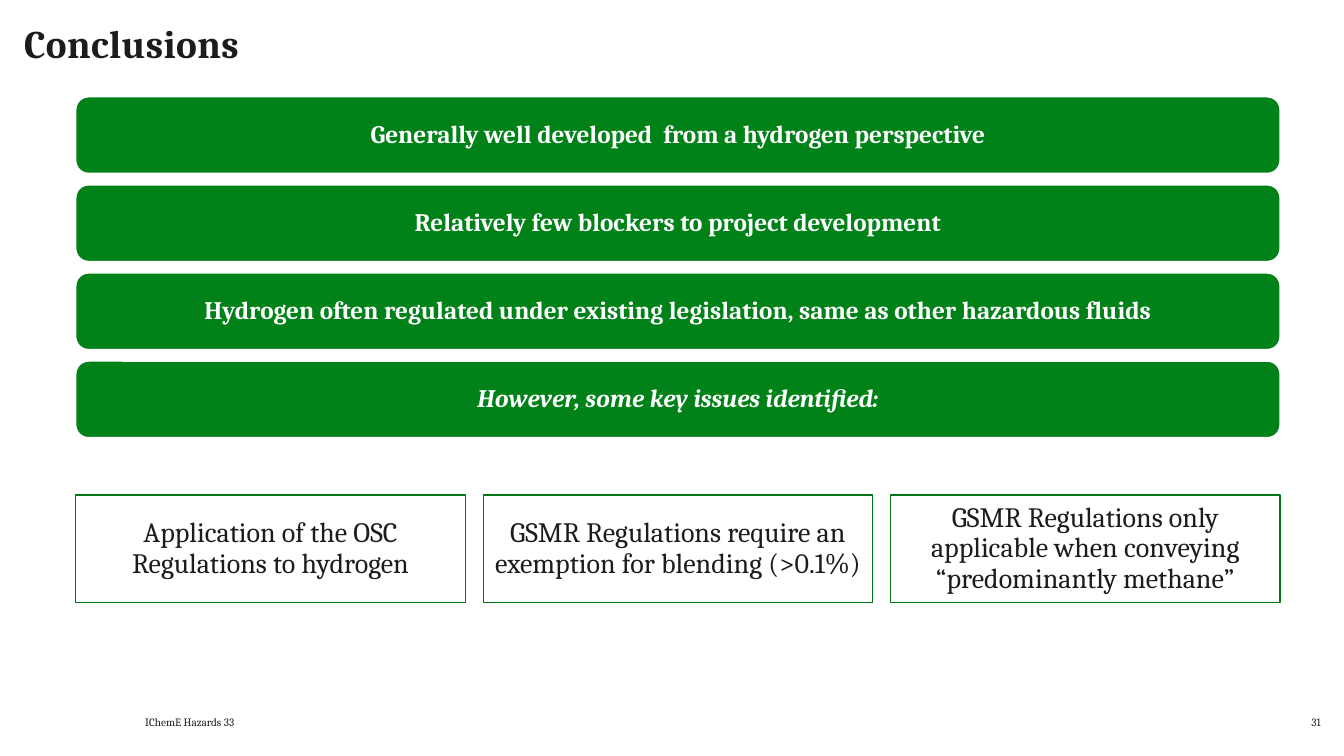
from pptx import Presentation
from pptx.dml.color import RGBColor
from pptx.enum.shapes import MSO_SHAPE
from pptx.enum.text import MSO_ANCHOR, PP_ALIGN
from pptx.util import Cm, Pt

INK, WHITE, GREEN, BORDER = "1C1C1C", "FFFFFF", "018219", "017617"

FINDINGS = [
    "Generally well developed  from a hydrogen perspective",
    "Relatively few blockers to project development",
    "Hydrogen often regulated under existing legislation, same as other hazardous fluids",
    "However, some key issues identified:",
]
ISSUES = [
    "Application of the OSC Regulations to hydrogen",
    "GSMR Regulations require an exemption for blending (>0.1%)",
    "GSMR Regulations only applicable when conveying “predominantly methane”",
]


def color(hex_code):
    return RGBColor.from_string(hex_code)


class SlideBuilder:
    font_name = "Cambria"

    def __init__(self, slide):
        self.slide = slide

    def set_text(self, frame, text, inset=0, anchor=MSO_ANCHOR.TOP, align=PP_ALIGN.LEFT,
                 ink=INK, line_spacing=0.9, tracking=0, **font_format):
        """Fill a text frame with one paragraph; tracking is in points."""
        frame_format = {"word_wrap": True, "vertical_anchor": anchor}
        for side in ("left", "top", "right", "bottom"):
            frame_format[f"margin_{side}"] = Cm(inset)
        for key, value in frame_format.items():
            setattr(frame, key, value)

        paragraph = frame.paragraphs[0]
        paragraph.alignment = align
        paragraph.line_spacing = line_spacing
        run = paragraph.add_run()
        run.text = text
        for key, value in {"name": self.font_name, **font_format}.items():
            setattr(run.font, key, value)
        run.font.color.rgb = color(ink)
        if tracking:
            run._r.get_or_add_rPr().set("spc", str(round(tracking * 100)))

    def label(self, text, left, top, width, height, **text_format):
        box = self.slide.shapes.add_textbox(Cm(left), Cm(top), Cm(width), Cm(height))
        self.set_text(box.text_frame, text, **text_format)

    def panel(self, preset, text, left, top, width, height, fill, line, **text_format):
        panel = self.slide.shapes.add_shape(preset, Cm(left), Cm(top), Cm(width), Cm(height))
        panel.shadow.inherit = False
        panel.fill.solid()
        panel.fill.fore_color.rgb = color(fill)
        panel.line.color.rgb = color(line)
        panel.line.width = Pt(1)
        self.set_text(panel.text_frame, text, anchor=MSO_ANCHOR.MIDDLE,
                      align=PP_ALIGN.CENTER, **text_format)


def main():
    presentation = Presentation()
    presentation.slide_width, presentation.slide_height = Cm(33.87), Cm(19.05)
    builder = SlideBuilder(presentation.slides.add_slide(presentation.slide_layouts[6]))

    builder.label("Conclusions", 0.61, 0.61, 32.66, 2, size=Pt(28), bold=True, tracking=0.3)

    left, full_width = 1.91, 30.35
    bar_height, bar_step = 1.93, 2.22
    for row, finding in enumerate(FINDINGS):
        builder.panel(MSO_SHAPE.ROUNDED_RECTANGLE, finding,
                      left, 2.44 + row * bar_step, full_width, bar_height,
                      GREEN, WHITE, inset=0.18, ink=WHITE, size=Pt(18), bold=True,
                      italic=finding == FINDINGS[-1])

    issue_gap = 0.45
    issue_width = (full_width - issue_gap * (len(ISSUES) - 1)) / len(ISSUES)
    for column, issue in enumerate(ISSUES):
        builder.panel(MSO_SHAPE.RECTANGLE, issue,
                      left + column * (issue_width + issue_gap), 12.47, issue_width, 2.72,
                      WHITE, BORDER, inset=0.2, size=Pt(20))

    footer = {"anchor": MSO_ANCHOR.BOTTOM, "line_spacing": 1.0, "size": Pt(8)}
    builder.label("IChemE Hazards 33", 3.66, 17.86, 13, 0.5, **footer)
    builder.label("31", 31.78, 17.86, 1.5, 0.5, align=PP_ALIGN.RIGHT, **footer)

    presentation.save("out.pptx")


if __name__ == "__main__":
    main()
